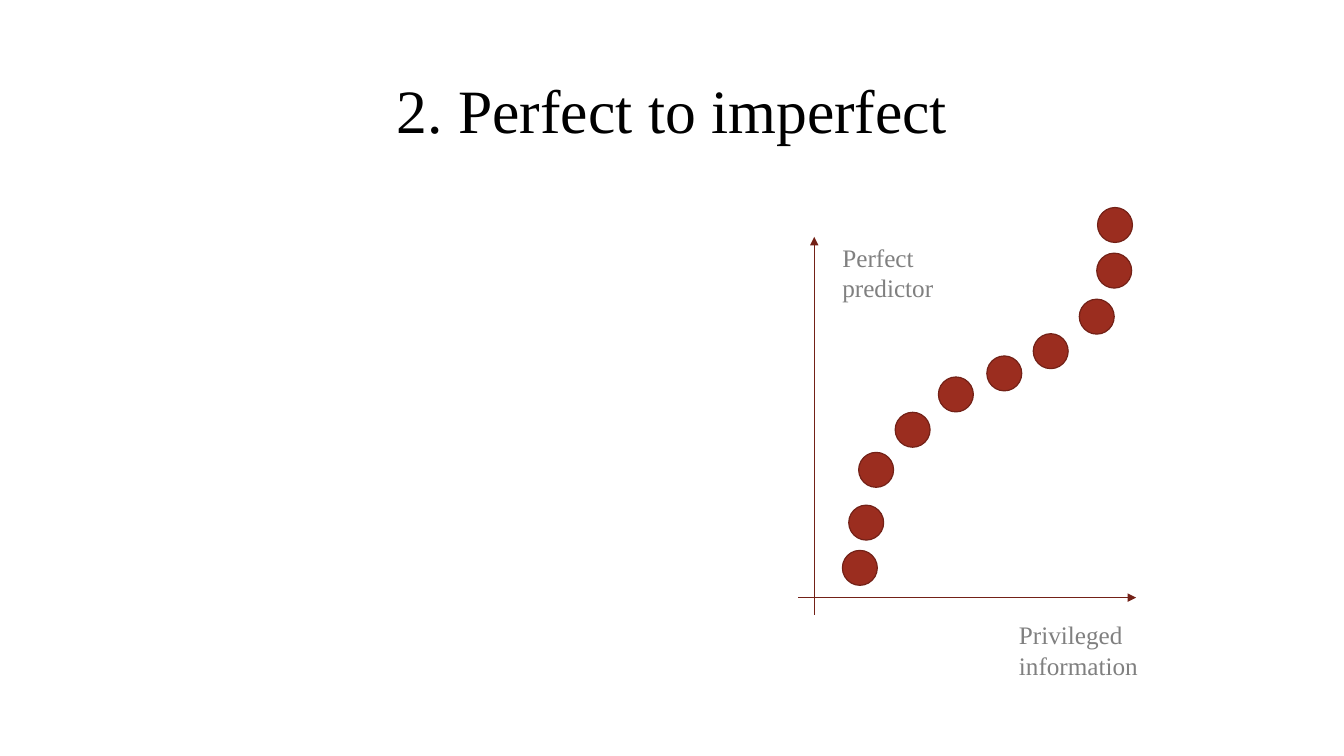
from dataclasses import dataclass

import pptx
import pptx.dml.color
import pptx.enum.shapes
import pptx.enum.text
import pptx.oxml
import pptx.oxml.ns
import pptx.presentation
import pptx.shapes.base
import pptx.slide
import pptx.util
from pptx.util import Cm

FONT = "Times New Roman"
DOT_FILL = "9B2D1F"
DARK_RED = "732117"
LINE_WIDTH = pptx.util.Pt(0.85)
DOT_SIZE = 0.88


# Lengths are in centimetres
@dataclass(frozen=True)
class Dot:
    left: float
    top: float


@dataclass(frozen=True)
class Axis:
    start_x: float
    start_y: float
    end_x: float
    end_y: float


@dataclass(frozen=True)
class Label:
    text: str
    left: float
    top: float
    width: float
    height: float
    size: int = 18
    color: str = "808080"
    is_title: bool = False


LABELS = [
    Label("2. Perfect to imperfect", 2.34, 1.02, 29.21, 3.68, 44, "000000", True),
    Label("Privileged information", 25.43, 15.49, 3.76, 1.8),
    Label("Perfect \vpredictor", 20.98, 5.97, 4.57, 1.8),
]

# The curve, from bottom left to top right
DOTS = [
    Dot(21.23, 13.87),
    Dot(21.39, 12.73),
    Dot(21.64, 11.4),
    Dot(22.56, 10.39),
    Dot(23.65, 9.5),
    Dot(24.87, 8.97),
    Dot(26.04, 8.41),
    Dot(27.2, 7.54),
    Dot(27.64, 6.38),
    Dot(27.66, 5.23),
]

AXES = [
    Axis(20.12, 15.06, 28.63, 15.06),
    Axis(20.52, 15.49, 20.52, 5.97),
]


def rgb(value: str) -> pptx.dml.color.RGBColor:
    return pptx.dml.color.RGBColor.from_string(value)


def add_label(slide: pptx.slide.Slide, label: Label) -> None:
    shape = slide.shapes.add_textbox(
        Cm(label.left), Cm(label.top), Cm(label.width), Cm(label.height)
    )
    text_frame = shape.text_frame
    text_frame.word_wrap = True
    paragraph = text_frame.paragraphs[0]
    paragraph.text = label.text
    if label.is_title:
        text_frame.vertical_anchor = pptx.enum.text.MSO_ANCHOR.MIDDLE
        paragraph.alignment = pptx.enum.text.PP_ALIGN.CENTER
        paragraph.line_spacing = 0.9
    else:
        text_frame.auto_size = pptx.enum.text.MSO_AUTO_SIZE.SHAPE_TO_FIT_TEXT
    for run in paragraph.runs:
        run.font.name = FONT
        run.font.size = pptx.util.Pt(label.size)
        run.font.color.rgb = rgb(label.color)


def add_dot(slide: pptx.slide.Slide, dot: Dot) -> None:
    shape = slide.shapes.add_shape(
        pptx.enum.shapes.MSO_SHAPE.OVAL,
        Cm(dot.left), Cm(dot.top), Cm(DOT_SIZE), Cm(DOT_SIZE),
    )
    shape.shadow.inherit = False
    shape.fill.solid()
    shape.fill.fore_color.rgb = rgb(DOT_FILL)
    shape.line.color.rgb = rgb(DARK_RED)
    shape.line.width = LINE_WIDTH


def add_axis(slide: pptx.slide.Slide, axis: Axis) -> None:
    connector = slide.shapes.add_connector(
        pptx.enum.shapes.MSO_CONNECTOR.STRAIGHT,
        Cm(axis.start_x), Cm(axis.start_y), Cm(axis.end_x), Cm(axis.end_y),
    )
    connector.line.color.rgb = rgb(DARK_RED)
    connector.line.width = LINE_WIDTH
    # Arrowhead at the end, and no shadow
    namespace = pptx.oxml.ns.nsdecls("a")
    line = connector.line._get_or_add_ln()
    line.append(pptx.oxml.parse_xml(f'<a:tailEnd {namespace} type="triangle"/>'))
    properties = connector._element.spPr
    properties.append(pptx.oxml.parse_xml(f"<a:effectLst {namespace}/>"))


def main() -> None:
    presentation = pptx.Presentation()
    presentation.slide_width = Cm(33.87)
    presentation.slide_height = Cm(19.05)
    slide = presentation.slides.add_slide(presentation.slide_layouts[6])

    # Dots of the curve
    for dot in DOTS:
        add_dot(slide, dot)

    # Axes
    for axis in AXES:
        add_axis(slide, axis)

    # Title and axis labels
    for label in LABELS:
        add_label(slide, label)

    presentation.save("out.pptx")


if __name__ == "__main__":
    main()
